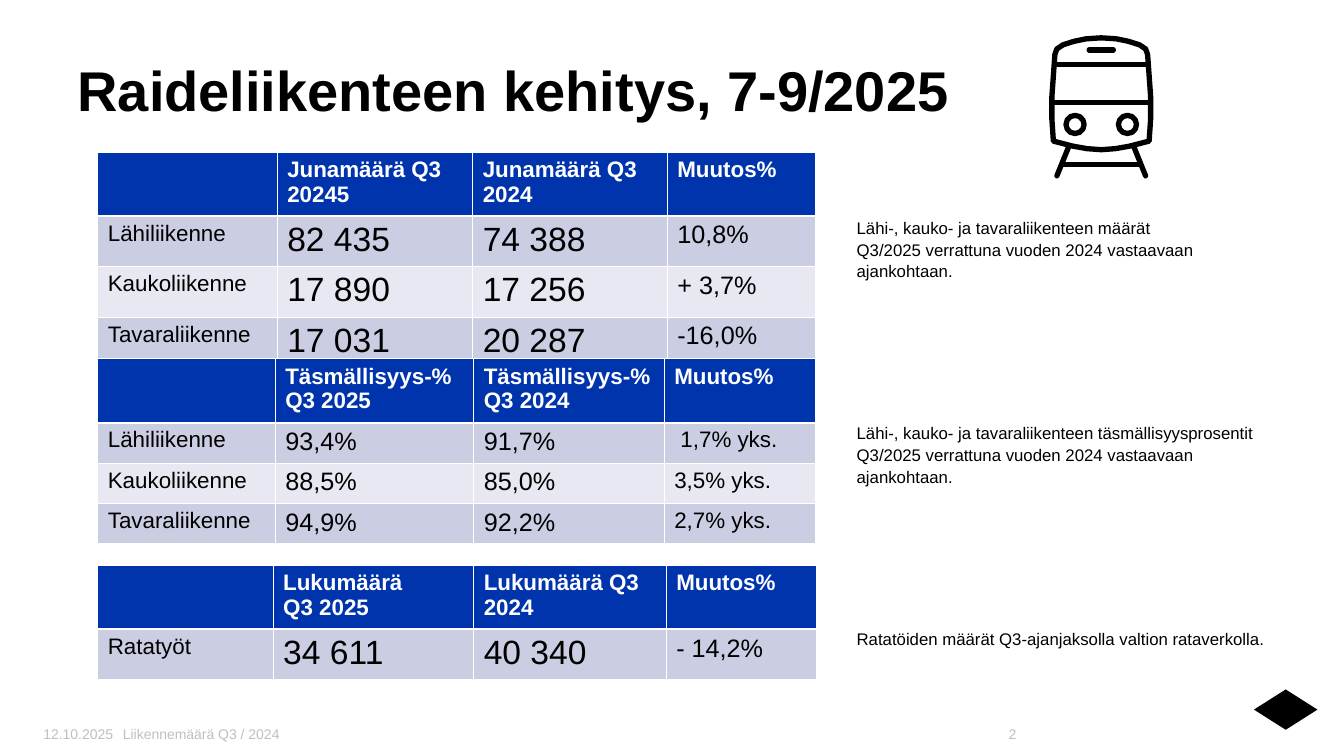
from dataclasses import dataclass

from lxml.etree import SubElement
from pptx import Presentation
from pptx.dml.color import RGBColor
from pptx.enum.shapes import MSO_CONNECTOR, MSO_SHAPE
from pptx.enum.text import MSO_ANCHOR, PP_ALIGN
from pptx.oxml.ns import qn
from pptx.util import Inches, Pt

CELL = 0.1  # inches; the slide is a grid of 133.33 columns and 75 rows
SLIDE_COLUMNS, SLIDE_ROWS = 133.33, 75
FONT = "Arial"
BLACK = RGBColor(0x00, 0x00, 0x00)
WHITE = RGBColor(0xFF, 0xFF, 0xFF)
GREY = RGBColor(0xBF, 0xBF, 0xBF)
HEADER_BLUE = RGBColor(0x00, 0x34, 0xAC)
BANDS = (RGBColor(0xCB, 0xCD, 0xE3), RGBColor(0xE7, 0xE8, 0xF1))
TABLE_LEFT = 9.7
TRAIN_AXIS = 109.25
TRAIN_STROKE = 3.8
NOTE_LINE = 1.07
NOTE_GAP = 100.4


@dataclass(frozen=True)
class FigureTable:
    top: float
    columns: tuple[float, ...]
    row_height: float
    sizes: tuple[int, ...]
    header: tuple[str, ...]
    rows: tuple[tuple[str, ...], ...]


@dataclass(frozen=True)
class Label:
    box: tuple[float, float, float, float]
    text: str
    size: int
    color: RGBColor = GREY
    bold: bool = False
    align: PP_ALIGN = PP_ALIGN.LEFT
    anchor: MSO_ANCHOR = MSO_ANCHOR.MIDDLE
    left_inset: float = 0
    top_inset: float = 0.5
    right_inset: float = 1


@dataclass(frozen=True)
class Bar:
    """A stroke of the train; x is counted from the train's axis."""
    start: tuple[float, float]
    end: tuple[float, float]
    rounded: bool = False


TABLES = (
    FigureTable(15.1, (17.8, 19.4, 19.3, 14.7), 4.7, (16, 24, 24, 18),
                ("", "Junamäärä Q3 20245", "Junamäärä Q3 2024", "Muutos%"),
                (("Lähiliikenne", "82 435", "74 388", "10,8%"),
                 ("Kaukoliikenne", "17 890", "17 256", "+ 3,7%"),
                 ("Tavaraliikenne", "17 031", "20 287", "-16,0%"))),
    FigureTable(35.6, (17.6, 19.7, 18.9, 15), 3.8, (16, 18, 18, 16),
                ("", "Täsmällisyys-% Q3 2025", "Täsmällisyys-% Q3 2024", "Muutos%"),
                (("Lähiliikenne", "93,4%", "91,7%", " 1,7% yks."),
                 ("Kaukoliikenne", "88,5%", "85,0%", "3,5% yks."),
                 ("Tavaraliikenne", "94,9%", "92,2%", "2,7% yks."))),
    FigureTable(56.1, (17.4, 19.9, 19.1, 14.9), 4.7, (16, 24, 24, 18),
                ("", "Lukumäärä\nQ3 2025", "Lukumäärä Q3 2024", "Muutos%"),
                (("Ratatyöt", "34 611", "40 340", "- 14,2%"),)),
)

LABELS = (
    Label((7.7, 5.5, 115, 12.2), "Raideliikenteen kehitys, 7-9/2025", 40, BLACK, True,
          anchor=MSO_ANCHOR.TOP, top_inset=0),
    Label((4.3, 71.5, 9, 2.6), "12.10.2025", 10),
    Label((11.2, 71.5, 79.8, 2.6), "Liikennemäärä Q3 / 2024", 10, left_inset=1, right_inset=0),
    Label((91.4, 71.5, 10.4, 2.6), "2", 10, align=PP_ALIGN.RIGHT),
)

# Text and the space before it in points
NOTES = (
    ("Lähi-, kauko- ja tavaraliikenteen määrät", 0),
    ("Q3/2025 verrattuna vuoden 2024 vastaavaan ajankohtaan.", 0),
    ("Lähi-, kauko- ja tavaraliikenteen täsmällisyysprosentit Q3/2025 verrattuna "
     "vuoden 2024 vastaavaan ajankohtaan.", NOTE_GAP),
    ("Ratatöiden määrät Q3-ajanjaksolla valtion rataverkolla.", NOTE_GAP),
)

TRAIN_SIDE = ((0, 3.75), (1.5, 3.85), (2.7, 4.1), (3.8, 4.45), (4.4, 4.85), (4.6, 5.4),
              (4.9, 9.6), (4.9, 11.8), (4.75, 14), (2.8, 14.5), (1.4, 14.75), (0, 14.85))
TRAIN_BARS = (
    Bar((-4.65, 6.4), (4.65, 6.4)),
    Bar((-4.95, 10.15), (4.95, 10.15)),
    Bar((-3.95, 16.35), (3.95, 16.35)),
    Bar((-1.2, 4.95), (1.2, 4.95), True),
    Bar((-3.25, 14.6), (-4.4, 17.45), True),
    Bar((3.25, 14.6), (4.4, 17.45), True),
)


def cells(count: float) -> int:
    return Inches(count * CELL)


def write(paragraph, text: str, *, size: int, color: RGBColor = BLACK, bold: bool = False,
          align: PP_ALIGN = PP_ALIGN.LEFT, line_spacing: float = 1, before: float = 0) -> None:
    paragraph.alignment = align
    paragraph.line_spacing = line_spacing
    paragraph.space_before = Pt(before)
    run = paragraph.add_run()
    run.text = text
    run.font.name = FONT
    run.font.size = Pt(size)
    run.font.bold = bold
    run.font.color.rgb = color


def next_paragraph(frame, index: int):
    return frame.add_paragraph() if index else frame.paragraphs[0]


def add_frame(slide, box: tuple[float, ...]):
    frame = slide.shapes.add_textbox(*map(cells, box)).text_frame
    frame.word_wrap = True
    return frame


def add_label(slide, label: Label) -> None:
    frame = add_frame(slide, label.box)
    frame.vertical_anchor = label.anchor
    frame.margin_left = cells(label.left_inset)
    frame.margin_top = cells(label.top_inset)
    frame.margin_right = cells(label.right_inset)
    write(frame.paragraphs[0], label.text, size=label.size, color=label.color,
          bold=label.bold, align=label.align)


def add_notes(slide) -> None:
    frame = add_frame(slide, (84, 21, 44.5, 43.4))
    for index, (text, before) in enumerate(NOTES):
        write(next_paragraph(frame, index), text, size=12, line_spacing=NOTE_LINE, before=before)


def set_border(cell, side: str, width: float) -> None:
    line = SubElement(cell._tc.get_or_add_tcPr(), qn(f"a:ln{side}"), w=str(Pt(width)))
    fill = SubElement(line, qn("a:solidFill"))
    SubElement(fill, qn("a:srgbClr"), val=str(WHITE))


def add_figure_table(slide, figures: FigureTable) -> None:
    heights = (5.8,) + (figures.row_height,) * len(figures.rows)
    table = slide.shapes.add_table(
        len(heights), len(figures.columns), cells(TABLE_LEFT), cells(figures.top),
        cells(sum(figures.columns)), cells(sum(heights))).table
    for column, width in zip(table.columns, figures.columns):
        column.width = cells(width)
    for row_index, texts in enumerate((figures.header, *figures.rows)):
        table.rows[row_index].height = cells(heights[row_index])
        is_header = row_index == 0
        for column_index, text in enumerate(texts):
            cell = table.cell(row_index, column_index)
            for side in "LRTB":
                thick = (side == "B" and is_header) or (side == "T" and row_index == 1)
                set_border(cell, side, 1.53 if thick else 0.6)
            cell.fill.solid()
            cell.fill.fore_color.rgb = HEADER_BLUE if is_header else BANDS[(row_index - 1) % 2]
            for index, line in enumerate(text.split("\n") if text else ()):
                write(next_paragraph(cell.text_frame, index), line,
                      size=16 if is_header else figures.sizes[column_index],
                      color=WHITE if is_header else BLACK, bold=is_header)


def outline(shape) -> None:
    shape.shadow.inherit = False
    shape.fill.background()
    shape.line.color.rgb = BLACK
    shape.line.width = Pt(TRAIN_STROKE)


def add_bar(slide, bar: Bar) -> None:
    (x1, y1), (x2, y2) = bar.start, bar.end
    connector = slide.shapes.add_connector(
        MSO_CONNECTOR.STRAIGHT, cells(TRAIN_AXIS + x1), cells(y1), cells(TRAIN_AXIS + x2), cells(y2))
    connector.line.color.rgb = BLACK
    connector.line.width = Pt(TRAIN_STROKE)
    if bar.rounded:
        connector.line._get_or_add_ln().set("cap", "rnd")
    SubElement(connector._element.spPr, qn("a:effectLst"))


def add_train(slide) -> None:
    mirrored = [(-x, y) for x, y in TRAIN_SIDE[-2:0:-1]]
    points = [(cells(TRAIN_AXIS + x), cells(y)) for x, y in (*TRAIN_SIDE, *mirrored)]
    builder = slide.shapes.build_freeform(*points[0])
    builder.add_line_segments(points[1:], close=True)
    outline(builder.convert_to_shape())
    for offset in (-2.6, 2.6):
        outline(slide.shapes.add_shape(MSO_SHAPE.OVAL, cells(TRAIN_AXIS + offset - 0.9),
                                       cells(11.45), cells(1.8), cells(1.8)))
    for bar in TRAIN_BARS:
        add_bar(slide, bar)


def add_emblem(slide) -> None:
    emblem = slide.shapes.add_shape(MSO_SHAPE.DIAMOND, *map(cells, (124.4, 68.4, 6.3, 4)))
    emblem.shadow.inherit = False
    emblem.fill.solid()
    emblem.fill.fore_color.rgb = BLACK
    emblem.line.fill.background()


def main() -> None:
    presentation = Presentation()
    presentation.slide_width = cells(SLIDE_COLUMNS)
    presentation.slide_height = cells(SLIDE_ROWS)
    slide = presentation.slides.add_slide(presentation.slide_layouts[6])
    add_emblem(slide)
    for label in LABELS:
        add_label(slide, label)
    for figures in TABLES:
        add_figure_table(slide, figures)
    add_notes(slide)
    add_train(slide)
    presentation.save("out.pptx")


if __name__ == "__main__":
    main()
